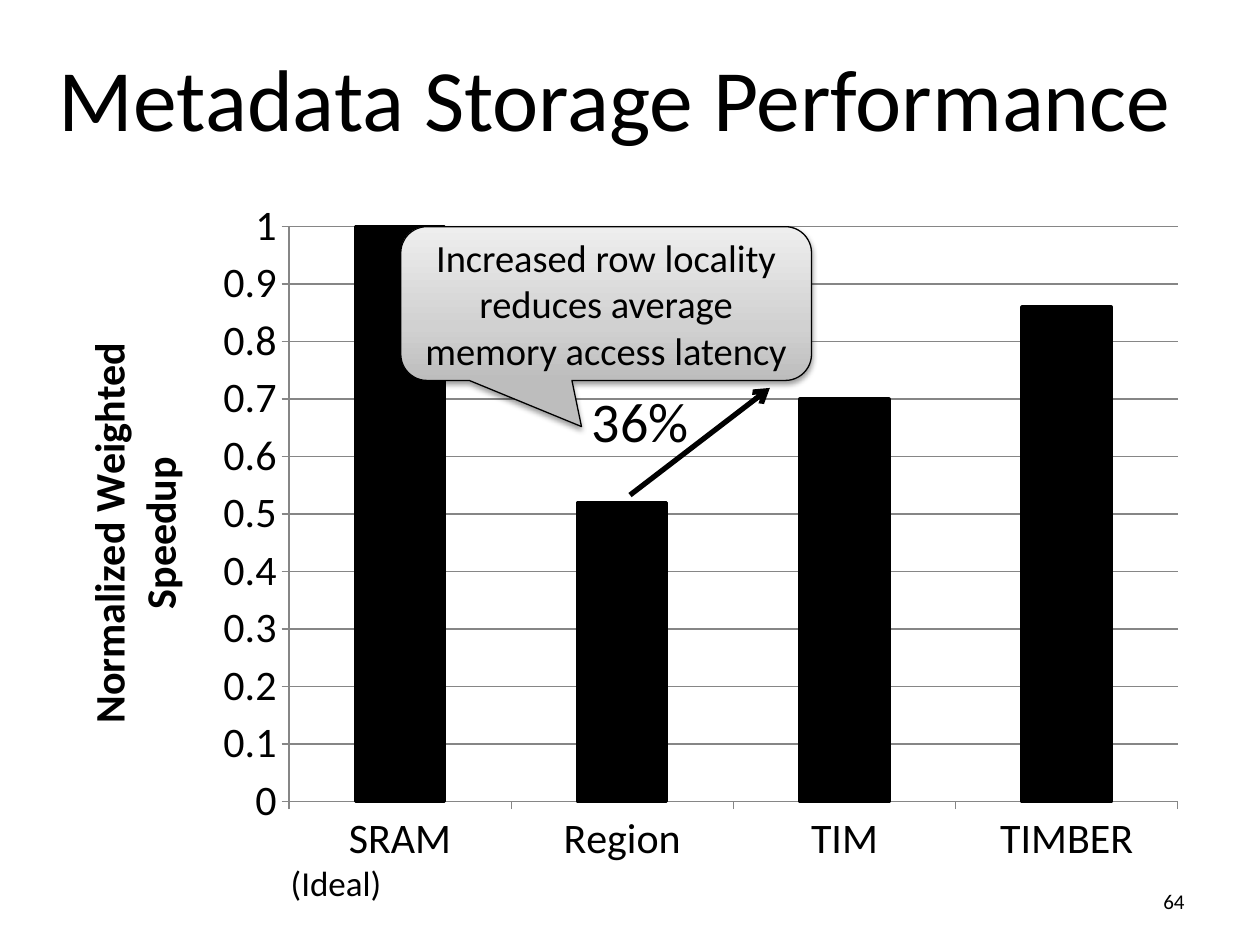
import copy
from dataclasses import dataclass

import pptx
import pptx.chart.data
import pptx.dml.color
import pptx.enum.chart
import pptx.enum.shapes
import pptx.enum.text
import pptx.oxml
import pptx.oxml.ns
import pptx.util

Cm, Pt = pptx.util.Cm, pptx.util.Pt
RGB = pptx.dml.color.RGBColor.from_string
ALIGN = pptx.enum.text.PP_ALIGN
ANCHOR = pptx.enum.text.MSO_ANCHOR
NS = pptx.oxml.ns.nsdecls("a", "c")


@dataclass
class Theme:
    font: str = "Calibri"
    ink: str = "000000"
    grid: str = "868686"
    callout: tuple = ((0, "BDBDBD"), (0.35, "D1D1D1"), (1, "EEEEEE"))
    title: int = 50
    gain: int = 32
    axis: int = 24
    note: int = 22
    small: int = 20
    number: int = 12


class SlideBuilder:
    def __init__(self, prs, theme):
        self.theme = theme
        self.s = prs.slides.add_slide(prs.slide_layouts[6])

    def style(self, font, size, **extra):
        values = {"name": self.theme.font, "size": Pt(size), **extra}
        for name, value in values.items():
            setattr(font, name, value)
        font.color.rgb = RGB(self.theme.ink)

    def line(self, line, color, width):
        line.color.rgb = RGB(color)
        line.width = Pt(width)

    def fill_text(self, sp, text, size, align=ALIGN.LEFT, **frame):
        tf = sp.text_frame
        for name, value in {"word_wrap": True, **frame}.items():
            setattr(tf, name, value)
        p = tf.paragraphs[0]
        p.alignment = align
        r = p.add_run()
        r.text = text
        self.style(r.font, size)

    def text(self, box, text, size, **options):
        sp = self.s.shapes.add_textbox(*map(Cm, box))
        self.fill_text(sp, text, size, **options)

    def label(self, box, text, size):
        self.text(box, text, size, word_wrap=False,
                  auto_size=pptx.enum.text.MSO_AUTO_SIZE.SHAPE_TO_FIT_TEXT)

    def arrow(self, start, end, width):
        sp = self.s.shapes.add_connector(
            pptx.enum.shapes.MSO_CONNECTOR.STRAIGHT, *map(Cm, start + end))
        self.line(sp.line, self.theme.ink, width)
        sp.line._get_or_add_ln().append(
            pptx.oxml.parse_xml(f'<a:tailEnd {NS} type="arrow"/>'))
        sp._element.spPr.append(pptx.oxml.parse_xml(f"<a:effectLst {NS}/>"))

    def callout(self, box, text, tip):
        sp = self.s.shapes.add_shape(
            pptx.enum.shapes.MSO_SHAPE.ROUNDED_RECTANGULAR_CALLOUT, *map(Cm, box))
        for i, value in enumerate(tip):
            sp.adjustments[i] = value
        # Gradient from dark at the bottom to light at the top
        sp.fill.gradient()
        sp.fill.gradient_angle = 90
        stops = sp._element.spPr.xpath("./a:gradFill/a:gsLst")[0]
        stops.insert(1, copy.deepcopy(stops[0]))
        for stop, (position, color) in zip(sp.fill.gradient_stops, self.theme.callout):
            stop.position = position
            stop.color.rgb = RGB(color)
        self.line(sp.line, self.theme.ink, 0.75)
        # Soft shadow below
        sp._element.spPr.append(pptx.oxml.parse_xml(
            f'<a:effectLst {NS}><a:outerShdw blurRad="{Pt(3.1)}" dist="{Pt(1.6)}" '
            f'dir="5400000" rotWithShape="0"><a:srgbClr val="{self.theme.ink}">'
            '<a:alpha val="38000"/></a:srgbClr></a:outerShdw></a:effectLst>'))
        self.fill_text(sp, text, self.theme.note, align=ALIGN.CENTER,
                       vertical_anchor=ANCHOR.MIDDLE)

    def column_chart(self, box, values, axis_title, plot):
        data = pptx.chart.data.CategoryChartData()
        data.categories = list(values)
        data.add_series("Series 1", list(values.values()))
        chart = self.s.shapes.add_chart(
            pptx.enum.chart.XL_CHART_TYPE.COLUMN_CLUSTERED, *map(Cm, box), data).chart
        chart.has_legend = chart.has_title = False
        self.style(chart.font, self.theme.axis)
        # Columns
        columns = chart.plots[0]
        columns.gap_width = 150
        columns.vary_by_categories = False
        series = columns.series[0]
        series.format.fill.solid()
        series.format.fill.fore_color.rgb = RGB(self.theme.ink)
        self.line(series.format.line, self.theme.ink, 2)
        # Axes
        axis = chart.value_axis
        scale = {"minimum_scale": 0, "maximum_scale": 1, "major_unit": 0.1,
                 "has_major_gridlines": True}
        for name, value in scale.items():
            setattr(axis, name, value)
        for ax in (chart.category_axis, axis):
            ax.major_tick_mark = pptx.enum.chart.XL_TICK_MARK.OUTSIDE
            self.line(ax.format.line, self.theme.grid, 0.75)
        self.line(axis.major_gridlines.format.line, self.theme.grid, 0.75)
        tf = axis.axis_title.text_frame
        tf.text = axis_title
        self.style(tf.paragraphs[0].runs[0].font, self.theme.axis, bold=True)
        # Inner plot area, as shares of the chart
        area = chart._chartSpace.xpath("./c:chart/c:plotArea")[0]
        for old in area.xpath("./c:layout"):
            area.remove(old)
        sizes = "".join(f'<c:{k} val="{v}"/>' for k, v in zip("xywh", plot))
        area.insert(0, pptx.oxml.parse_xml(
            f'<c:layout {NS}><c:manualLayout><c:layoutTarget val="inner"/>'
            f'<c:xMode val="edge"/><c:yMode val="edge"/>{sizes}'
            '</c:manualLayout></c:layout>'))


def main():
    prs = pptx.Presentation()
    prs.slide_width, prs.slide_height = Cm(25.4), Cm(19.05)
    theme = Theme()
    b = SlideBuilder(prs, theme)

    # Speedup chart
    b.column_chart((0.94, 3.73, 23.27, 13.97),
                   {"SRAM": 1, "Region": 0.52, "TIM": 0.7, "TIMBER": 0.86},
                   "Normalized Weighted Speedup", (0.21, 0.06, 0.77, 0.83))

    # Slide number and title
    b.text((18.21, 17.65, 5.92, 1.02), "64", theme.number,
           align=ALIGN.RIGHT, vertical_anchor=ANCHOR.MIDDLE)
    b.text((0.94, 1.17, 23.27, 1.57), "Metadata Storage Performance", theme.title,
           vertical_anchor=ANCHOR.MIDDLE)

    # Gain from Region to TIM
    b.arrow((12.7, 9.98), (15.52, 7.82), 3)
    b.label((11.68, 7.67, 2.49, 1.63), "36%", theme.gain)
    b.callout((8.08, 4.57, 8.28, 3.1),
              "Increased row locality reduces average memory access latency",
              (-0.06, 0.8, 0.17))

    # Note under SRAM
    b.label((5.61, 17.25, 2.36, 1.12), "(Ideal)", theme.small)

    prs.save("out.pptx")


if __name__ == "__main__":
    main()
